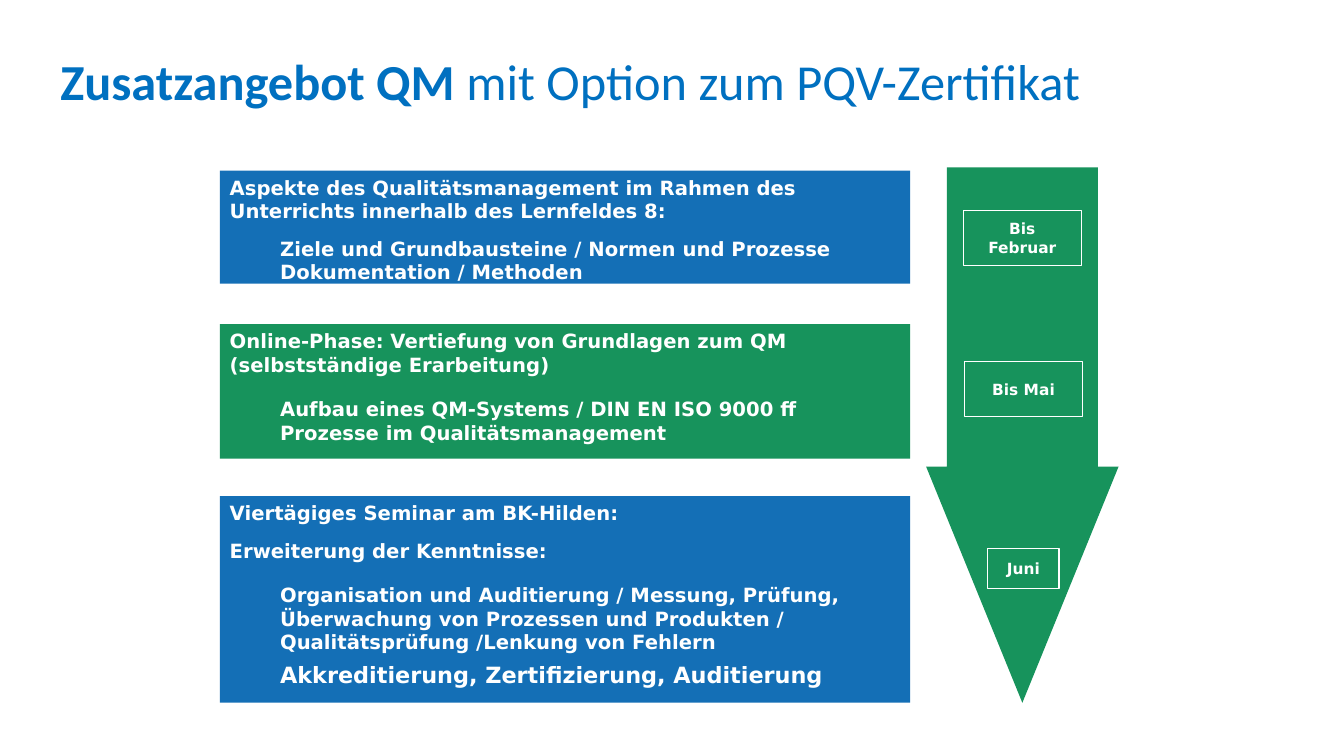
"""Builds the slide on the additional QM course and its timeline."""
from copy import deepcopy

from pptx import Presentation
from pptx import util as u
from pptx.dml.color import RGBColor
from pptx.enum import shapes, text
from pptx.oxml.ns import qn

BLUE, GREEN, WHITE, TITLE_BLUE = "146FB6", "17935C", "FFFFFF", "0070C0"


def color(hex_string):
    """Turn a hex string into a colour."""
    return RGBColor.from_string(hex_string)


def write(paragraph, wording, font="DejaVu Sans", size=14, bold=True, ink=WHITE,
          align=text.PP_ALIGN.LEFT, before=0, after=0, indent=0):
    """Add formatted wording to a paragraph, one line per line break."""
    paragraph.alignment = align
    paragraph.space_before, paragraph.space_after = u.Pt(before), u.Pt(after)
    if indent:
        paragraph.level = 1
        properties = paragraph._p.get_or_add_pPr()
        properties.set("marL", str(u.Cm(indent)))
        properties.set("indent", "0")
    for number, line in enumerate(wording.split("\n")):
        if number:
            paragraph.add_line_break()
        run = paragraph.add_run()
        run.text = line
        run.font.name, run.font.size, run.font.bold = font, u.Pt(size), bold
        run.font.color.rgb = color(ink)
    for line_break in paragraph._p.findall(qn("a:br")):
        line_break.append(deepcopy(run._r.rPr))


class CourseSlide:
    """Holds the style and the current slide."""

    def __init__(self, presentation):
        """Add a blank slide."""
        self.slide = presentation.slides.add_slide(presentation.slide_layouts[6])
        self.heading = dict(after=10)
        self.topic = dict(indent=1.27)
        self.spaced_topic = dict(indent=1.27, before=5, after=5)

    def title(self, strong, light):
        """Add the title with its bold and regular parts."""
        box = self.slide.shapes.add_textbox(u.Cm(1.27), u.Cm(1.14), u.Cm(26.57), u.Cm(1.8))
        box.text_frame.word_wrap = True
        for wording, bold in ((strong, True), (light, False)):
            write(box.text_frame.paragraphs[0], wording, "Calibri", 36, bold, TITLE_BLUE)

    def shape(self, kind, left, top, width, height, fill=None, line=None):
        """Add a flat preset shape."""
        shape = self.slide.shapes.add_shape(
            kind, u.Cm(left), u.Cm(top), u.Cm(width), u.Cm(height))
        shape.shadow.inherit = False
        if fill:
            shape.fill.solid()
            shape.fill.fore_color.rgb = color(fill)
        else:
            shape.fill.background()
        if line:
            shape.line.color.rgb = color(line)
            shape.line.width = u.Pt(0.75)
        else:
            shape.line.fill.background()
        return shape

    def phase(self, top, height, fill, paragraphs):
        """Add a course phase with its headings and topics."""
        block = self.shape(shapes.MSO_SHAPE.RECTANGLE, 5.54, top, 17.4, height, fill)
        frame = block.text_frame
        frame.word_wrap = True
        frame.vertical_anchor = text.MSO_ANCHOR.TOP
        for number, (wording, style) in enumerate(paragraphs):
            paragraph = frame.add_paragraph() if number else frame.paragraphs[0]
            write(paragraph, wording, **style)

    def timeline(self):
        """Add the downward arrow."""
        arrow = self.shape(shapes.MSO_SHAPE.DOWN_ARROW, 23.34, 4.22, 4.85, 13.49, GREEN)
        arrow.adjustments[0], arrow.adjustments[1] = 0.784, 1.227

    def deadline(self, left, top, width, height, wording):
        """Add an outlined date on the arrow."""
        label = self.shape(shapes.MSO_SHAPE.RECTANGLE, left, top, width, height, line=WHITE)
        label.text_frame.word_wrap = True
        label.text_frame.vertical_anchor = text.MSO_ANCHOR.MIDDLE
        write(label.text_frame.paragraphs[0], wording, size=11,
              align=text.PP_ALIGN.CENTER, after=10)


def main():
    """Build and save the slide."""
    presentation = Presentation()
    presentation.slide_width, presentation.slide_height = u.Cm(33.87), u.Cm(19.05)
    course = CourseSlide(presentation)
    heading, topic, spaced_topic = course.heading, course.topic, course.spaced_topic
    course.title("Zusatzangebot QM", " mit Option zum PQV-Zertifikat")
    course.phase(4.3, 2.85, BLUE, [
        ("Aspekte des Qualitätsmanagement im Rahmen des Unterrichts "
         "innerhalb des Lernfeldes 8:", heading),
        ("Ziele und Grundbausteine / Normen und Prozesse", topic),
        ("Dokumentation / Methoden", topic)])
    course.phase(8.17, 3.39, GREEN, [
        ("Online-Phase: Vertiefung von Grundlagen zum QM "
         "(selbstständige Erarbeitung)", heading),
        ("Aufbau eines QM-Systems / DIN EN ISO 9000 ff\n"
         "Prozesse im Qualitätsmanagement", spaced_topic)])
    course.phase(12.5, 5.21, BLUE, [
        ("Viertägiges Seminar am BK-Hilden:", heading),
        ("Erweiterung der Kenntnisse:", heading),
        ("Organisation und Auditierung / Messung, Prüfung, Überwachung von Prozessen "
         "und Produkten / Qualitätsprüfung /Lenkung von Fehlern", spaced_topic),
        ("Akkreditierung, Zertifizierung, Auditierung", dict(topic, size=16))])
    course.timeline()
    course.deadline(24.28, 5.31, 2.97, 1.38, "Bis Februar")
    course.deadline(24.31, 9.12, 2.97, 1.38, "Bis Mai")
    course.deadline(24.89, 13.82, 1.8, 1, "Juni")
    presentation.save("out.pptx")


if __name__ == "__main__":
    main()
